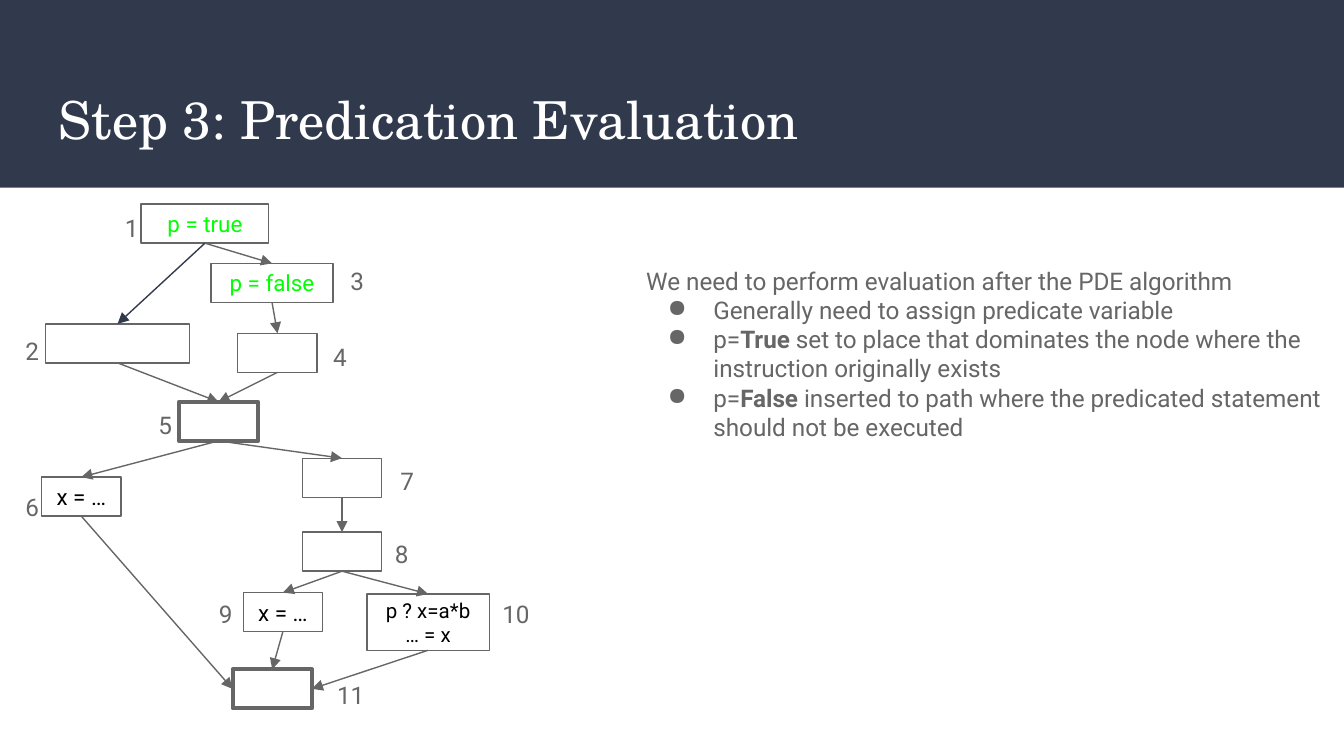
from lxml.etree import SubElement
from pptx import Presentation
from pptx.dml.color import RGBColor
from pptx.enum.shapes import MSO_CONNECTOR, MSO_SHAPE
from pptx.enum.text import MSO_ANCHOR, PP_ALIGN
from pptx.oxml.ns import qn
from pptx.util import Pt

NAVY, GREY, WHITE, GREEN, BLACK = "31394D", "666666", "FFFFFF", "00FF00", "000000"
BOTTOM, LEFT, RIGHT, TOP = 2, 1, 3, 0
BOX_H, SMALL_W, THICK = 20.9, 42.5, 2.25

# number: (left, top, width, height, line width, text, size, colour)
NODES = {
    1: (69.6, 2.4, 68.4, BOX_H, 0.75, "p = true", 12, GREEN),
    2: (18.5, 66.5, 77, BOX_H, 0.75, "", 12, BLACK),
    3: (107, 34.1, 65.5, BOX_H, 0.75, "p = false", 12, GREEN),
    4: (121.4, 71.6, SMALL_W, BOX_H, 0.75, "", 12, BLACK),
    5: (89.8, 108.3, SMALL_W, BOX_H, THICK, "", 12, BLACK),
    6: (16.3, 148.6, SMALL_W, BOX_H, 0.75, "x = …", 12, BLACK),
    7: (156, 138.5, SMALL_W, BOX_H, 0.75, "", 12, BLACK),
    8: (156, 178.1, SMALL_W, BOX_H, 0.75, "", 12, BLACK),
    9: (124.3, 210.5, SMALL_W, BOX_H, 0.75, "x = …", 12, BLACK),
    10: (190.6, 211.2, 65.5, 30.2, 0.75, "p ? x=a*b\n… = x", 11, BLACK),
    11: (118.6, 251.6, SMALL_W, BOX_H, THICK, "", 12, BLACK),
}
# number: (left, top, width)
LABELS = {
    1: (53.8, 0.3, 16), 2: (0.5, 65.8, 16), 3: (174.7, 28.4, 16),
    4: (165.4, 69.4, 16), 5: (71.8, 105.4, 16), 6: (0.5, 149.3, 16),
    7: (201.4, 135.6, 16), 8: (198.5, 174.5, 16), 9: (104.2, 206.9, 27.4),
    10: (256.1, 206.9, 31.7), 11: (167.5, 250.1, 31),
}
# (from node, to node, side entered, colour)
EDGES = [
    (1, 2, TOP, NAVY), (1, 3, TOP, GREY), (3, 4, TOP, GREY), (2, 5, TOP, GREY),
    (4, 5, TOP, GREY), (5, 6, TOP, GREY), (5, 7, TOP, GREY), (7, 8, TOP, GREY),
    (8, 9, TOP, GREY), (8, 10, TOP, GREY), (6, 11, LEFT, GREY),
    (9, 11, TOP, GREY), (10, 11, RIGHT, GREY),
]
# each paragraph is a list of (text, bold)
NOTES = [
    [("We need to perform evaluation after the PDE algorithm", False)],
    [("Generally need to assign predicate variable", False)],
    [("p=", False), ("True", True),
     (" set to place that dominates the node where the instruction originally exists", False)],
    [("p=", False), ("False", True),
     (" inserted to path where the predicated statement should not be executed", False)],
]


def rgb(value):
    return RGBColor.from_string(value)


def add_run(p, text, size, color, font="Roboto", bold=False):
    r = p.add_run()
    r.text = text
    for name, value in {"size": Pt(size), "name": font, "bold": bold}.items():
        setattr(r.font, name, value)
    r.font.color.rgb = rgb(color)


def set_frame(sp, anchor=MSO_ANCHOR.TOP):
    tf = sp.text_frame
    style = {"word_wrap": True, "vertical_anchor": anchor}
    style.update({f"margin_{side}": Pt(7.2) for side in ("left", "right", "top", "bottom")})
    for name, value in style.items():
        setattr(tf, name, value)
    return tf


def add_text(s, left, top, width, height):
    return set_frame(s.shapes.add_textbox(Pt(left), Pt(top), Pt(width), Pt(height)))


def add_rect(s, left, top, width, height, fill):
    sp = s.shapes.add_shape(MSO_SHAPE.RECTANGLE, Pt(left), Pt(top), Pt(width), Pt(height))
    sp.shadow.inherit = False
    sp.fill.solid()
    sp.fill.fore_color.rgb = rgb(fill)
    return sp


def add_node(s, left, top, width, height, weight, text, size, color):
    sp = add_rect(s, left, top, width, height, WHITE)
    sp.line.color.rgb = rgb(GREY)
    sp.line.width = Pt(weight)
    tf = set_frame(sp, MSO_ANCHOR.MIDDLE)
    for i, line in enumerate(text.splitlines()):
        p = tf.add_paragraph() if i else tf.paragraphs[0]
        p.alignment = PP_ALIGN.CENTER
        add_run(p, line, size, color)
    return sp


def add_arrow(s, start, end, side, color):
    c = s.shapes.add_connector(MSO_CONNECTOR.STRAIGHT, 0, 0, 0, 0)
    c.begin_connect(start, BOTTOM)
    c.end_connect(end, side)
    c.line.color.rgb = rgb(color)
    c.line.width = Pt(0.75)
    SubElement(c.line._get_or_add_ln(), qn("a:tailEnd"), type="triangle")
    SubElement(c._element.spPr, qn("a:effectLst"))


def add_header(s, left, top, width, height):
    band = add_rect(s, left, top, width, height, NAVY)
    band.line.fill.background()
    tf = add_text(s, left + 24.5, top + 39.6, width - 49, 49)
    add_run(tf.paragraphs[0], "Step 3: Predication Evaluation", 28, WHITE, "TeX Gyre Schola")


def add_flow_graph(s, left, top):
    # Nodes
    nodes = {n: add_node(s, left + x, top + y, *rest)
             for n, (x, y, *rest) in NODES.items()}
    # Arrows
    for start, end, side, color in EDGES:
        add_arrow(s, nodes[start], nodes[end], side, color)
    # Node numbers
    for n, (x, y, width) in LABELS.items():
        tf = add_text(s, left + x, top + y, width, 32.4)
        add_run(tf.paragraphs[0], str(n), 13, GREY)


def add_notes(s, left, top, width, height):
    tf = add_text(s, left, top, width, height)
    for i, runs in enumerate(NOTES):
        p = tf.add_paragraph() if i else tf.paragraphs[0]
        if i:
            pPr = p._p.get_or_add_pPr()
            pPr.set("marL", str(Pt(36)))
            pPr.set("indent", str(Pt(-24.5)))
            SubElement(SubElement(pPr, qn("a:buClr")), qn("a:srgbClr"), val=GREY)
            SubElement(pPr, qn("a:buChar"), char="●")
        for text, bold in runs:
            add_run(p, text, 13, GREY, bold=bold)


def main():
    prs = Presentation()
    prs.slide_width, prs.slide_height = Pt(720), Pt(405)
    s = prs.slides.add_slide(prs.slide_layouts[6])
    add_header(s, 0, 0, 720, 100.5)
    add_flow_graph(s, 6, 107)
    add_notes(s, 339.1, 135.4, 382.3, 109.4)
    prs.save("out.pptx")


if __name__ == "__main__":
    main()
